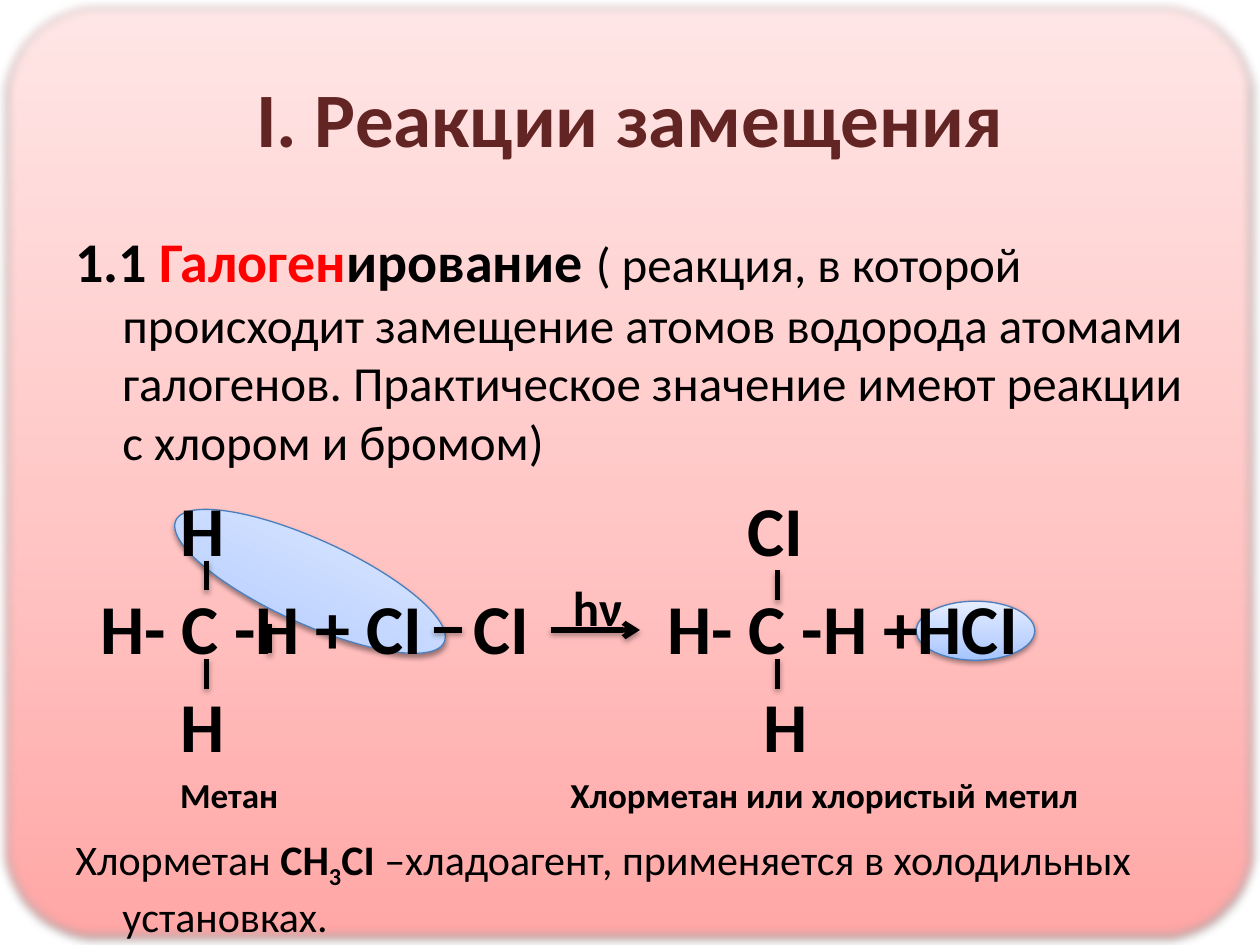
from lxml.etree import SubElement
from pptx import Presentation
from pptx.dml.color import RGBColor
from pptx.enum.shapes import MSO_CONNECTOR as CONN, MSO_SHAPE as SHAPE
from pptx.enum.text import MSO_ANCHOR as ANCHOR, PP_ALIGN as ALIGN
from pptx.oxml.ns import qn
from pptx.util import Cm, Pt

BLACK = RGBColor(0x00, 0x00, 0x00)
RED = RGBColor(0xFF, 0x00, 0x00)
MAROON = RGBColor(0x63, 0x25, 0x23)
OUTLINE = RGBColor(0x4B, 0x7E, 0xBC)
PINKS = [RGBColor(0xFF, 0xA6, 0xA5), RGBColor(0xFF, 0xC0, 0xBF), RGBColor(0xFF, 0xE7, 0xE7)]
BLUES = [RGBColor(0xA4, 0xC4, 0xFF), RGBColor(0xBF, 0xD4, 0xFF), RGBColor(0xE6, 0xEE, 0xFF)]
STOPS = (0, 35, 100)
FONT = "Calibri"
ROW_PITCH = 1.98


def add_run(p, text, size=28, bold=False, color=BLACK, baseline=0):
    r = p.add_run()
    r.text = text
    r.font.name, r.font.size, r.font.bold = FONT, Pt(size), bold
    r.font.color.rgb = color
    if baseline:
        r.font._element.set("baseline", str(baseline * 1000))


def add_box(slide, left, top, width, height, hanging=0):
    """Add a wrapping text box and return its first paragraph."""
    tf = slide.shapes.add_textbox(Cm(left), Cm(top), Cm(width), Cm(height)).text_frame
    tf.word_wrap = True
    p = tf.paragraphs[0]
    if hanging:
        pPr = p._p.get_or_add_pPr()
        pPr.set("marL", str(Cm(hanging)))
        pPr.set("indent", str(-Cm(hanging)))
    return p


def add_effects(shape, alpha=38, soft_edge=0):
    effects = SubElement(shape._element.spPr, qn("a:effectLst"))
    shadow = SubElement(effects, qn("a:outerShdw"), blurRad=str(Pt(3.1)),
                        dist=str(Pt(1.6)), dir="5400000", rotWithShape="0")
    color = SubElement(shadow, qn("a:srgbClr"), val=str(BLACK))
    SubElement(color, qn("a:alpha"), val=str(alpha * 1000))
    if soft_edge:
        SubElement(effects, qn("a:softEdge"), rad=str(Pt(soft_edge)))


def add_gradient_shape(slide, kind, left, top, width, height, colors, line=None, soft_edge=0):
    sp = slide.shapes.add_shape(kind, Cm(left), Cm(top), Cm(width), Cm(height))
    sp.fill.gradient()
    sp.fill.gradient_angle = 90
    stops = sp._element.spPr.find(qn("a:gradFill")).find(qn("a:gsLst"))
    for old in list(stops):
        stops.remove(old)
    for pos, color in zip(STOPS, colors):
        stop = SubElement(stops, qn("a:gs"), pos=str(pos * 1000))
        SubElement(stop, qn("a:srgbClr"), val=str(color))
    if line is None:
        sp.line.fill.background()
    else:
        sp.line.color.rgb = line
        sp.line.width = Pt(0.75)
    add_effects(sp, soft_edge=soft_edge)
    return sp


def add_bond(slide, x1, y1, x2, y2, arrow=False):
    cxn = slide.shapes.add_connector(CONN.STRAIGHT, Cm(x1), Cm(y1), Cm(x2), Cm(y2))
    cxn.line.color.rgb = BLACK
    cxn.line.width = Pt(3)
    if arrow:
        SubElement(cxn._element.spPr.find(qn("a:ln")), qn("a:tailEnd"), type="arrow")
    add_effects(cxn, alpha=35)


def add_panel(slide, width, height):
    panel = add_gradient_shape(slide, SHAPE.ROUNDED_RECTANGLE, 0, 0, width, height,
                               PINKS, soft_edge=5)
    panel.adjustments[0] = 0.1


def add_title(slide, left, top, width, height):
    title = slide.shapes.title
    title.left, title.top, title.width, title.height = map(Cm, (left, top, width, height))
    slide.shapes._spTree.append(title._element)
    tf = title.text_frame
    tf.vertical_anchor = ANCHOR.MIDDLE
    p = tf.paragraphs[0]
    p.alignment = ALIGN.CENTER
    add_run(p, "I. Реакции замещения", size=44, bold=True, color=MAROON)


def add_definition(slide, left, top, width, height):
    p = add_box(slide, left, top, width, height, hanging=0.95)
    add_run(p, "1.1 ", size=32, bold=True)
    add_run(p, "Галоген", size=32, bold=True, color=RED)
    add_run(p, "ирование ", size=32, bold=True)
    add_run(p, "( реакция, в которой происходит замещение атомов водорода атомами "
               "галогенов. Практическое значение имеют реакции с хлором и бромом)")


def add_highlights(slide, left, top):
    """Ovals behind the atoms that leave the molecules."""
    for x, y, w, h, angle in ((17.2, 2.44, 2.39, 1.19, 0), (2.01, 1.19, 5.94, 1.7, 24.4)):
        oval = add_gradient_shape(slide, SHAPE.OVAL, left + x, top + y, w, h, BLUES, OUTLINE)
        oval.rotation = angle


def add_atoms(slide, left, top):
    rows = (
        ((2.11, "H"), (13.54, "CI")),
        ((0.5, "H- C -H + CI"), (8.03, "CI"), (11.94, "H- C -H +HCI")),
        ((2.11, "H"), (13.87, "H")),
    )
    for i, row in enumerate(rows):
        for x, text in row:
            width = 7.6 if len(text) > 2 else 1.8
            p = add_box(slide, left + x, top + i * ROW_PITCH, width, 1.98)
            add_run(p, text, size=40, bold=True)


def add_bonds(slide, left, top):
    """Bonds, reaction arrow and its condition."""
    mid = top + 3.02
    add_bond(slide, left + 9.83, mid, left + 11.63, mid, arrow=True)
    add_bond(slide, left + 7.47, mid, left + 8.05, mid)
    for x, y in ((2.9, 1.62), (2.9, 3.6), (4.17, 2.89), (14.4, 1.82), (14.4, 3.6)):
        add_bond(slide, left + x, top + y, left + x, top + y + 0.6)
    add_run(add_box(slide, left + 10.03, top + 1.83, 1.8, 1.45), "hν", bold=True)


def add_reaction(slide, left, top):
    add_highlights(slide, left, top)
    add_atoms(slide, left, top)
    add_bonds(slide, left, top)
    for x, width, name in ((2.11, 4, "Метан"), (9.98, 12, "Хлорметан или хлористый метил")):
        p = add_box(slide, left + x, top + 5.79, width, 1.12)
        add_run(p, name, size=20, bold=True)


def add_note(slide, left, top, width, height):
    p = add_box(slide, left, top, width, height, hanging=0.95)
    add_run(p, "Хлорметан ", size=24)
    add_run(p, "СН", size=24, bold=True)
    add_run(p, "3", size=24, bold=True, baseline=-25)
    add_run(p, "СI ", size=24, bold=True)
    add_run(p, "–хладоагент, применяется в холодильных установках.", size=24)


def main():
    prs = Presentation()
    prs.slide_width, prs.slide_height = Cm(25.4), Cm(19.05)
    slide = prs.slides.add_slide(prs.slide_layouts[5])
    add_panel(slide, 25.4, 19.05)
    add_title(slide, 1.27, 0.76, 22.86, 3.18)
    add_definition(slide, 1.27, 4.45, 22.86, 5.2)
    add_reaction(slide, 1.27, 9.68)
    add_note(slide, 1.27, 16.67, 22.86, 2.3)
    prs.save("out.pptx")


if __name__ == "__main__":
    main()
